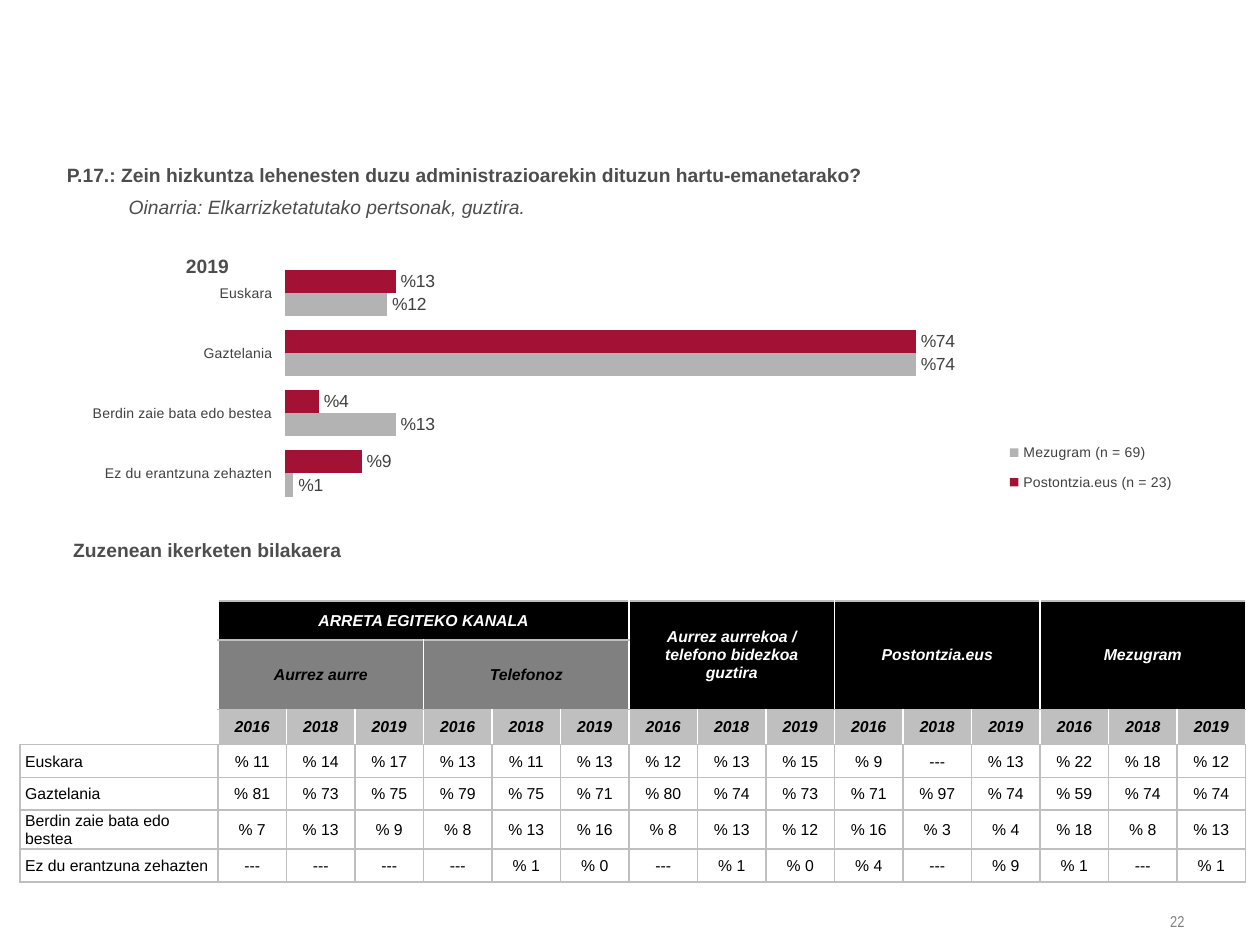
from lxml.etree import SubElement
from pptx import Presentation
from pptx.chart.data import CategoryChartData
from pptx.dml.color import RGBColor
from pptx.enum.chart import XL_CHART_TYPE, XL_LABEL_POSITION, XL_LEGEND_POSITION, XL_TICK_MARK
from pptx.enum.text import MSO_ANCHOR, MSO_AUTO_SIZE, PP_ALIGN
from pptx.oxml import parse_xml
from pptx.oxml.ns import nsdecls, qn
from pptx.util import Inches, Pt

ANSWERS = ["Euskara", "Gaztelania", "Berdin zaie bata edo bestea", "Ez du erantzuna zehazten"]
SERIES = [("Postontzia.eus (n = 23)", [0.13, 0.74, 0.04, 0.09], "A31235"),
          ("Mezugram (n = 69)", [0.12, 0.74, 0.13, 0.01], "B3B3B3")]
YEARS = ["2016", "2018", "2019"]
# Percentages by channel and year; None where there is no answer
RESULTS = [
    [11, 14, 17, 13, 11, 13, 12, 13, 15, 9, None, 13, 22, 18, 12],
    [81, 73, 75, 79, 75, 71, 80, 74, 73, 71, 97, 74, 59, 74, 74],
    [7, 13, 9, 8, 13, 16, 8, 13, 12, 16, 3, 4, 18, 8, 13],
    [None, None, None, None, 1, 0, None, 1, 0, 4, None, 9, 1, None, 1],
]
# Row, column, rows spanned, columns spanned, text, fill, text colour
HEADERS = [
    (0, 1, 1, 6, "ARRETA EGITEKO KANALA", "000000", "FFFFFF"),
    (0, 7, 2, 3, "Aurrez aurrekoa / telefono bidezkoa\nguztira", "000000", "FFFFFF"),
    (0, 10, 2, 3, "Postontzia.eus", "000000", "FFFFFF"),
    (0, 13, 2, 3, "Mezugram", "000000", "FFFFFF"),
    (1, 1, 1, 3, "Aurrez aurre", "808080", "000000"),
    (1, 4, 1, 3, "Telefonoz", "808080", "000000"),
]
ROW_HEIGHTS = [0.31, 0.55, 0.28, 0.26, 0.26, 0.31, 0.26]
LABEL_WIDTH = 1.57
GRAY, WHITE, DARK = "BFBFBF", "FFFFFF", "4D4D4D"


def rgb(value):
    return RGBColor.from_string(value)


def write(p, text, size=11, color=DARK, font="Arial", bold=False, italic=False,
          align=PP_ALIGN.LEFT, spacing=None):
    """Add text to a paragraph; a newline becomes a line break."""
    p.alignment = align
    if spacing:
        p.line_spacing = Pt(spacing)
    for i, line in enumerate(text.split("\n")):
        if i:
            p.add_line_break()
        r = p.add_run()
        r.text = line
        r.font.size, r.font.name = Pt(size), font
        r.font.bold, r.font.italic = bold, italic
        r.font.color.rgb = rgb(color)


def place(sp, box, anchor=MSO_ANCHOR.TOP):
    """Move a text shape to its box and return its first paragraph."""
    sp.left, sp.top, sp.width, sp.height = map(Inches, box)
    tf = sp.text_frame
    tf.word_wrap, tf.auto_size, tf.vertical_anchor = True, MSO_AUTO_SIZE.NONE, anchor
    tf.margin_left, tf.margin_right = Inches(0.04), Inches(0.1)
    tf.margin_top = tf.margin_bottom = Inches(0.05)
    return tf.paragraphs[0]


def add_text(s, box, text, anchor=MSO_ANCHOR.TOP, **style):
    write(place(s.shapes.add_textbox(0, 0, 0, 0), box, anchor), text, **style)


def add_question(s, box):
    p = place(s.shapes.title, box)
    pPr = p._p.get_or_add_pPr()
    pPr.set("marL", str(Inches(0.49)))
    pPr.set("indent", str(-Inches(0.49)))
    write(p, "P.17.: Zein hizkuntza lehenesten duzu administrazioarekin dituzun hartu-emanetarako?",
          bold=True, spacing=18)
    p.add_line_break()
    write(p, "Oinarria: Elkarrizketatutako pertsonak, guztira.", italic=True, spacing=18)


def set_layout(parent, x, y, w, h, inner=False):
    """Fix the place of a chart part in shares of the chart's size."""
    for old in parent.findall(qn("c:layout")):
        parent.remove(old)
    target = '<c:layoutTarget val="inner"/>' if inner else ""
    layout = parse_xml(
        f'<c:layout {nsdecls("c")}><c:manualLayout>{target}'
        '<c:xMode val="edge"/><c:yMode val="edge"/>'
        f'<c:x val="{x}"/><c:y val="{y}"/><c:w val="{w}"/><c:h val="{h}"/>'
        '</c:manualLayout></c:layout>')
    parent.insert(0 if inner else 1, layout)


def add_bar_chart(s, box):
    data = CategoryChartData(number_format="0%")
    data.categories = ANSWERS
    for name, values, _ in SERIES:
        data.add_series(name, values)
    chart = s.shapes.add_chart(XL_CHART_TYPE.BAR_CLUSTERED, *map(Inches, box), data).chart
    chart.has_title = False
    chart.font.size, chart.font.name = Pt(10), "Arial"
    chart.font.color.rgb = rgb("404040")

    plot = chart.plots[0]
    plot.gap_width, plot.overlap, plot.vary_by_categories = 61, 0, False
    for series, (_, _, color) in zip(plot.series, SERIES):
        series.format.fill.solid()
        series.format.fill.fore_color.rgb = rgb(color)
        labels = series.data_labels
        labels.show_value = True
        labels.number_format, labels.number_format_is_linked = "%0", False
        labels.position = XL_LABEL_POSITION.OUTSIDE_END

    cat = chart.category_axis
    cat.reverse_order = True
    cat.major_tick_mark = XL_TICK_MARK.OUTSIDE
    cat.format.line.fill.background()
    cat.tick_labels.font.size = Pt(8)
    val = chart.value_axis
    val.minimum_scale, val.maximum_scale, val.major_unit = 0, 1, 0.5
    val.has_major_gridlines = val.visible = False

    chart.has_legend = True
    chart.legend.position = XL_LEGEND_POSITION.RIGHT
    chart.legend.include_in_layout = False
    chart.legend.font.size = Pt(8)
    set_layout(chart.legend._element, 0.83, 0.7, 0.16, 0.32)
    set_layout(chart._chartSpace.chart.plotArea, 0.216, 0.008, 0.734, 0.991, inner=True)


def set_borders(cell, sides, ends):
    """Draw left and right in one colour, top and bottom in another; None draws no line."""
    tcPr = cell._tc.get_or_add_tcPr()
    for i, (side, color) in enumerate(zip("LRTB", (sides, sides, ends, ends))):
        fill = f'<a:solidFill><a:srgbClr val="{color}"/></a:solidFill>' if color else "<a:noFill/>"
        tcPr.insert(i, parse_xml(f'<a:ln{side} {nsdecls("a")} w="12700">{fill}</a:ln{side}>'))


def fill_cell(cell, text, fill, **style):
    cell.vertical_anchor = MSO_ANCHOR.MIDDLE
    cell.fill.solid()
    cell.fill.fore_color.rgb = rgb(fill)
    write(cell.text_frame.paragraphs[0], text, size=9, **style)


def fill_data_cell(cell, text, left=0.01, align=PP_ALIGN.CENTER):
    fill_cell(cell, text, WHITE, color="000000", align=align)
    cell.margin_left, cell.margin_bottom = Inches(left), 0
    cell.margin_right = cell.margin_top = Inches(0.01)


def add_results_table(s, box):
    count = len(RESULTS[0])
    table = s.shapes.add_table(len(ROW_HEIGHTS), count + 1, *map(Inches, box)).table
    table.first_row = table.horz_banding = False
    for row, height in zip(table.rows, ROW_HEIGHTS):
        row.height = Inches(height)
    for c, col in enumerate(table.columns):
        col.width = Inches((box[2] - LABEL_WIDTH) / count if c else LABEL_WIDTH)

    for r in range(len(ROW_HEIGHTS)):
        for c in range(count + 1):
            cell = table.cell(r, c)
            if r < 3:
                cell.fill.background()
                set_borders(cell, WHITE, GRAY if c else None)
            else:
                set_borders(cell, GRAY, GRAY)
            if r < 2 or (r == 2 and c == 0):
                SubElement(cell.text_frame.paragraphs[0]._p, qn("a:endParaRPr"), sz="900")

    head = dict(bold=True, italic=True, align=PP_ALIGN.CENTER)
    for r, c, rows, cols, text, fill, color in HEADERS:
        cell = table.cell(r, c)
        cell.merge(table.cell(r + rows - 1, c + cols - 1))
        fill_cell(cell, text, fill, color=color, **head)
    for c in range(count):
        fill_cell(table.cell(2, c + 1), YEARS[c % len(YEARS)], GRAY, color="000000", **head)
    for r, (answer, values) in enumerate(zip(ANSWERS, RESULTS), 3):
        fill_data_cell(table.cell(r, 0), answer, left=0.04, align=PP_ALIGN.LEFT)
        for c, value in enumerate(values, 1):
            fill_data_cell(table.cell(r, c), "---" if value is None else f"% {value}")


def main():
    prs = Presentation()
    prs.slide_width, prs.slide_height = Inches(10), Inches(7.5)
    s = prs.slides.add_slide(prs.slide_layouts[5])
    heading = dict(bold=True, align=PP_ALIGN.CENTER, spacing=18)
    add_text(s, (8.7, 7.17, 0.8, 0.28), "22", anchor=MSO_ANCHOR.MIDDLE, size=9,
             font="Arial Narrow", color="808080", align=PP_ALIGN.RIGHT)
    add_question(s, (0.49, 1.18, 9.01, 0.61))
    add_bar_chart(s, (0.27, 2.07, 9.22, 1.93))
    add_text(s, (0.49, 1.9, 2.37, 0.33), "2019", **heading)
    add_results_table(s, (0.16, 4.77, 9.73, sum(ROW_HEIGHTS)))
    add_text(s, (0.49, 4.16, 2.37, 0.35), "Zuzenean ikerketen bilakaera", **heading)
    prs.save("out.pptx")


if __name__ == "__main__":
    main()
